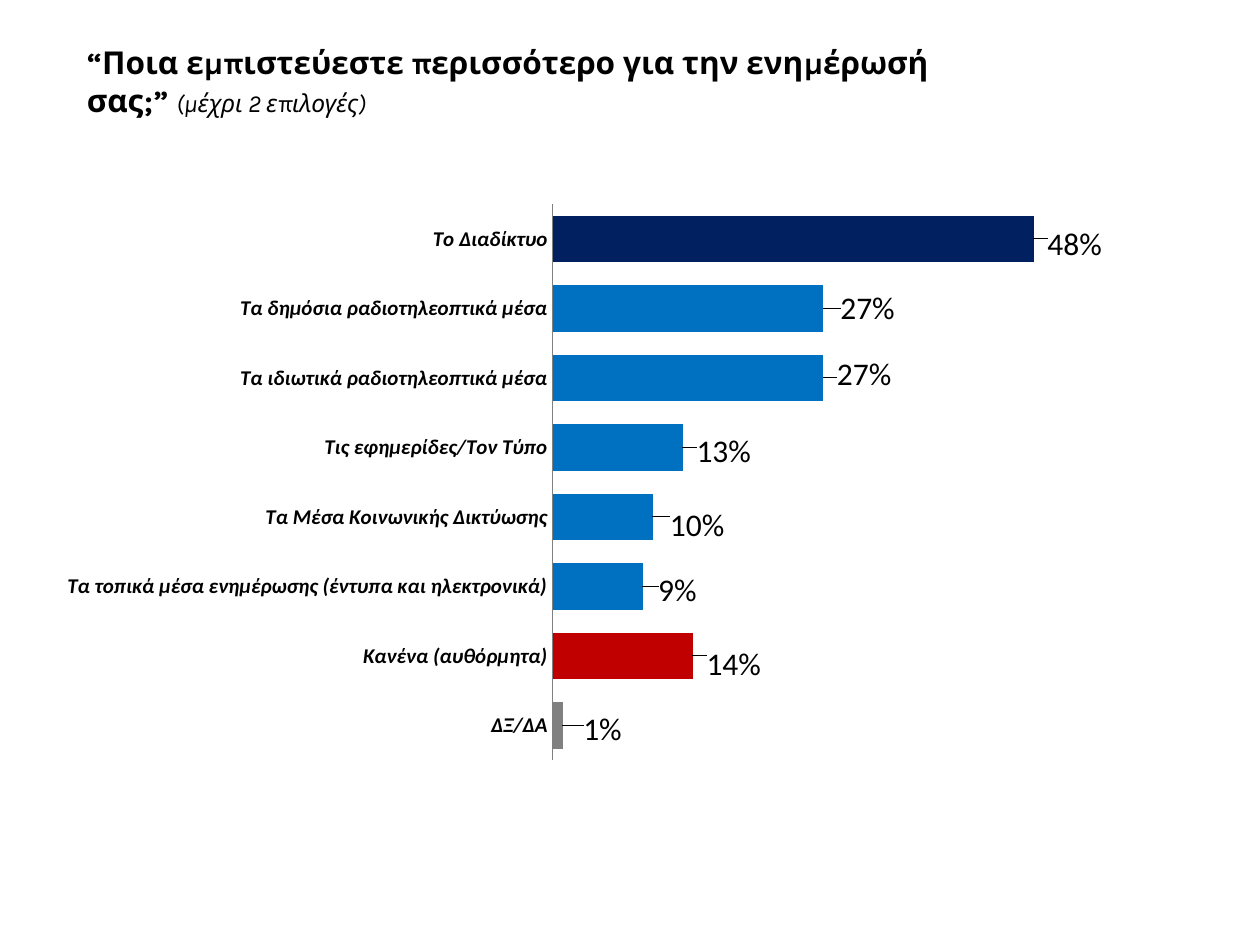
from dataclasses import dataclass

from pptx import Presentation
from pptx.chart.data import CategoryChartData
from pptx.dml.color import RGBColor
from pptx.enum import chart as chart_enum, text
from pptx.oxml import parse_xml
from pptx.oxml.ns import nsdecls, qn
from pptx.util import Pt

BLACK, BLUE, NAVY, RED, GREY = "000000", "0070C0", "002060", "C00000", "808080"
CHART_LEFT, CHART_TOP, CHART_WIDTH, CHART_HEIGHT = 25.2, 105.84, 657.36, 339.84


@dataclass
class Answer:
    label: str
    share: float
    nudge: tuple[float, float]  # label shift from the bar end, in points
    color: str = BLUE


ANSWERS = [
    Answer("Το Διαδίκτυο", 0.48, (5, 3), NAVY),
    Answer("Τα δημόσια ραδιοτηλεοπτικά μέσα", 0.27, (7, 0)),
    Answer("Τα ιδιωτικά ραδιοτηλεοπτικά μέσα", 0.27, (5, -2)),
    Answer("Τις εφημερίδες/Τον Τύπο", 0.13, (5, 2)),
    Answer("Τα Μέσα Κοινωνικής Δικτύωσης", 0.10, (7, 5)),
    Answer("Τα τοπικά μέσα ενημέρωσης (έντυπα και ηλεκτρονικά)", 0.09, (6, 2)),
    Answer("Κανένα (αυθόρμητα)", 0.14, (5, 5), RED),
    Answer("ΔΞ/ΔΑ", 0.01, (9, 2), GREY),
]


def rgb(color: str) -> RGBColor:
    return RGBColor.from_string(color)


def style_font(font, name: str, size: float, bold=False, italic=False) -> None:
    font.name, font.size = name, Pt(size)
    font.bold, font.italic = bold, italic
    font.color.rgb = rgb(BLACK)


def manual_layout(**settings):
    """Return a c:layout element; settings appear in the given order."""
    items = "".join(f'<c:{key} val="{value}"/>' for key, value in settings.items())
    return parse_xml(
        f'<c:layout {nsdecls("c")}><c:manualLayout>{items}</c:manualLayout></c:layout>'
    )


def add_question(slide) -> None:
    box = slide.shapes.add_textbox(Pt(42.5), Pt(20.9), Pt(510.5), Pt(46))
    frame = box.text_frame
    frame.word_wrap = True
    frame.auto_size = text.MSO_AUTO_SIZE.SHAPE_TO_FIT_TEXT
    paragraph = frame.paragraphs[0]
    paragraph.text = "“Ποια εμπιστεύεστε περισσότερο για την ενημέρωσή σας;” "
    style_font(paragraph.runs[0].font, "Karla", 18, bold=True)
    hint = paragraph.add_run()
    hint.text = "(μέχρι 2 επιλογές)"
    style_font(hint.font, "Karla", 14, italic=True)


def style_axes(chart) -> None:
    categories = chart.category_axis
    categories.reverse_order = True
    categories.has_major_gridlines = False
    categories.major_tick_mark = chart_enum.XL_TICK_MARK.NONE
    categories.format.line.color.rgb = rgb(GREY)
    categories.format.line.width = Pt(0.75)
    style_font(categories.tick_labels.font, "Calibri", 12, bold=True, italic=True)
    values = chart.value_axis
    values.minimum_scale, values.maximum_scale = 0, 0.6
    values.has_major_gridlines = False
    values.visible = False


def style_bars(plot, answers: list[Answer]) -> None:
    plot.gap_width = 50
    plot.vary_by_categories = False
    plot.has_data_labels = True
    labels = plot.data_labels
    labels.show_value = True
    labels.number_format, labels.number_format_is_linked = "0%", False
    series = plot.series[0]
    series.invert_if_negative = False
    series.format.fill.solid()
    series.format.fill.fore_color.rgb = rgb(BLUE)
    for index, answer in enumerate(answers):
        point = series.points[index]
        if answer.color != BLUE:
            point.format.fill.solid()
            point.format.fill.fore_color.rgb = rgb(answer.color)
        style_font(point.data_label.font, "Calibri", 18)
        point.data_label.position = chart_enum.XL_LABEL_POSITION.OUTSIDE_END
    for answer, label in zip(answers, series._element.iter(qn("c:dLbl"))):
        right, down = answer.nudge
        layout = manual_layout(
            x=round(right / CHART_WIDTH, 4), y=round(down / CHART_HEIGHT, 4)
        )
        label.find(qn("c:idx")).addnext(layout)


def place_plot_area(chart) -> None:
    plot_area = chart._chartSpace.chart.plotArea
    for layout in plot_area.findall(qn("c:layout")):
        plot_area.remove(layout)
    plot_area.insert(0, manual_layout(
        layoutTarget="inner", xMode="edge", yMode="edge",
        x=0.442, y=0.032, w=0.523, h=0.935,
    ))


def add_answer_chart(slide, answers: list[Answer]) -> None:
    data = CategoryChartData(number_format="0%")
    data.categories = [answer.label for answer in answers]
    data.add_series("Series 1", [answer.share for answer in answers])
    chart = slide.shapes.add_chart(
        chart_enum.XL_CHART_TYPE.BAR_CLUSTERED,
        Pt(CHART_LEFT), Pt(CHART_TOP), Pt(CHART_WIDTH), Pt(CHART_HEIGHT), data,
    ).chart
    chart.has_legend = False
    chart.has_title = False
    style_font(chart.font, "Calibri", 18)
    style_axes(chart)
    style_bars(chart.plots[0], answers)
    place_plot_area(chart)


def main() -> None:
    presentation = Presentation()
    presentation.slide_width, presentation.slide_height = Pt(720), Pt(540)
    slide = presentation.slides.add_slide(presentation.slide_layouts[6])
    add_question(slide)
    add_answer_chart(slide, ANSWERS)
    presentation.save("out.pptx")


if __name__ == "__main__":
    main()
